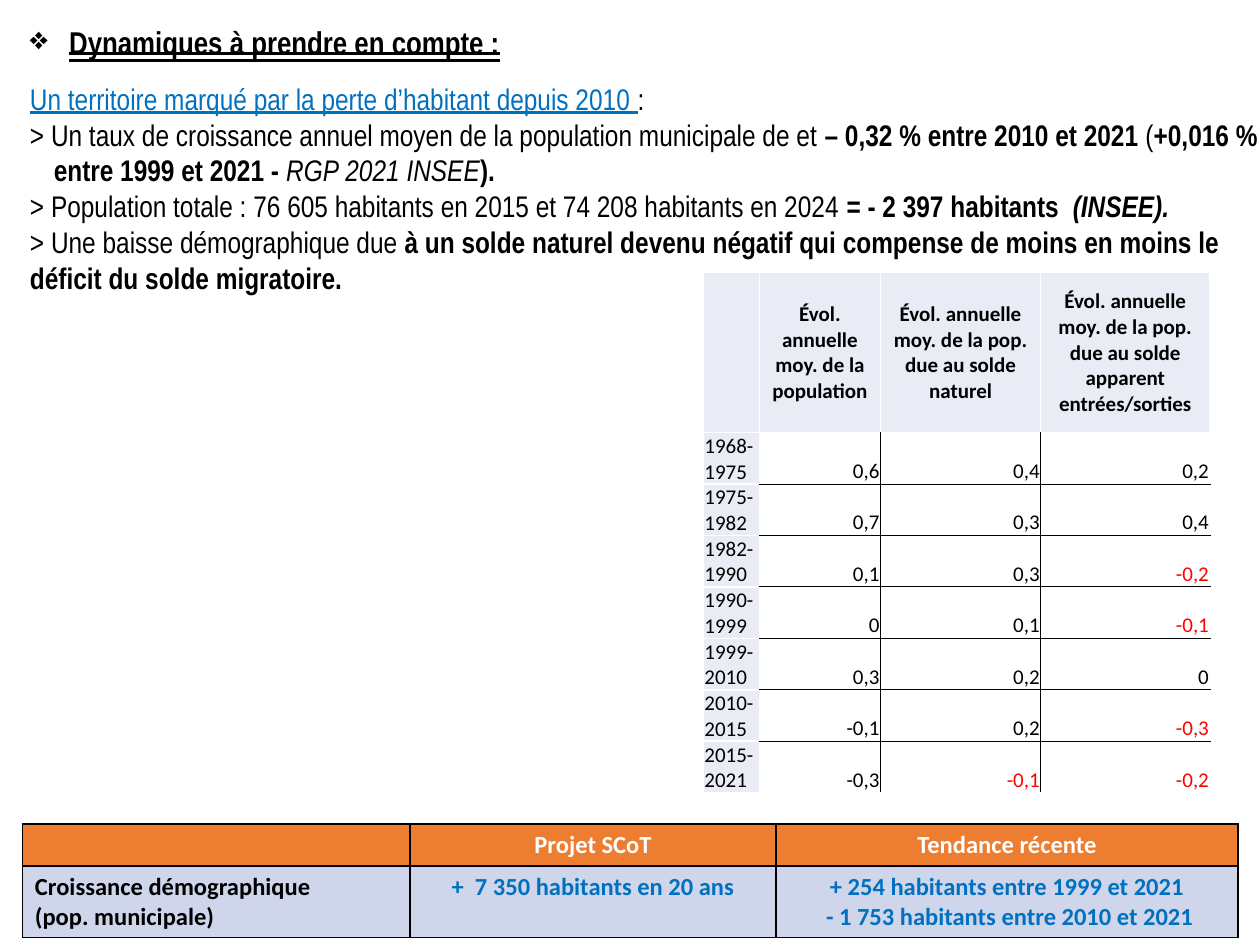
from lxml.etree import SubElement
from pptx import Presentation
from pptx.dml.color import RGBColor
from pptx.enum.text import MSO_ANCHOR, MSO_AUTO_SIZE, MSO_UNDERLINE, PP_ALIGN
from pptx.oxml.ns import qn
from pptx.util import Cm, Pt

COLOURS = {"text": "000000", "accent": "0070C0", "negative": "FF0000", "white": "FFFFFF",
           "orange": "ED7D31", "pale": "E9EBF5", "blue_grey": "CFD5EA"}

BOLD = {"bold": True}
ITALIC = {"italic": True}
UNDERLINE = {"underline": True}

HEADING = [(0.79, [("Dynamiques à prendre en compte :",
                    {"bold": True, "underline": MSO_UNDERLINE.DOUBLE_LINE})])]
FINDINGS = [
    (0, [("Un territoire marqué par la perte d’habitant depuis 2010 ", UNDERLINE | {"colour": "accent"}),
         (":", {})]),
    (0.48, [("> Un taux de croissance annuel moyen de la population municipale de et ", {}),
            ("– 0,32 % entre 2010 et 2021 ", BOLD), ("(", {}),
            ("+0,016 % entre 1999 et 2021 - ", BOLD), ("RGP 2021 INSEE", ITALIC), (").", BOLD)]),
    (0.48, [("> Population totale : 76 605 habitants en 2015 et 74 208 habitants en 2024", {}),
            (" = - 2 397 habitants ", BOLD), (" (INSEE).", BOLD | ITALIC)]),
    (0, [("> Une baisse démographique due ", {}),
         ("à un solde naturel devenu négatif qui compense de moins en moins le "
          "déficit du solde migratoire.", BOLD)]),
]
PROJECTION = [
    ["", "Projet SCoT", "Tendance récente"],
    ["Croissance démographique\n(pop. municipale)", " +  7 350 habitants en 20 ans ",
     "+ 254 habitants entre 1999 et 2021\n - 1 753 habitants entre 2010 et 2021"],
]
EVOLUTION = [
    ["", "Évol. annuelle moy. de la population",
     "Évol. annuelle moy. de la pop. due au solde naturel",
     "Évol. annuelle moy. de la pop. due au solde apparent entrées/sorties"],
    ["1968-1975", "0,6", "0,4", "0,2"],
    ["1975-1982", "0,7", "0,3", "0,4"],
    ["1982-1990", "0,1", "0,3", "-0,2"],
    ["1990-1999", "0", "0,1", "-0,1"],
    ["1999-2010", "0,3", "0,2", "0"],
    ["2010-2015", "-0,1", "0,2", "-0,3"],
    ["2015-2021", "-0,3", "-0,1", "-0,2"],
]


def set_values(target, values):
    for name, value in values.items():
        setattr(target, name, value)


def rgb(name):
    return RGBColor.from_string(COLOURS[name])


def add_span(para, text, size, font, colour="text", **values):
    span = para.add_run()
    span.text = text
    set_values(span.font, {"name": font, "size": Pt(size), "bold": False} | values)
    span.font.color.rgb = rgb(colour)


def fill_placeholder(box, place, paragraphs, size, bullet=None):
    set_values(box, dict(zip(("left", "top", "width", "height"), map(Cm, place))))
    frame = box.text_frame
    set_values(frame, {"word_wrap": True, "auto_size": MSO_AUTO_SIZE.SHAPE_TO_FIT_TEXT,
                       "vertical_anchor": MSO_ANCHOR.TOP})
    for number, (indent, spans) in enumerate(paragraphs):
        para = frame.add_paragraph() if number else frame.paragraphs[0]
        set_values(para, {"alignment": PP_ALIGN.LEFT, "space_before": Pt(0), "line_spacing": 1.0})
        properties = para._p.get_or_add_pPr()
        properties.set("marL", str(Cm(indent)))
        properties.set("indent", str(-Cm(indent)))
        if bullet:
            SubElement(properties, qn("a:buChar"), char=bullet)
        else:
            SubElement(properties, qn("a:buNone"))
        for text, values in spans:
            add_span(para, text, size, "Arial Narrow", **values)


def add_grid(slide, place, widths, heights, rows, style):
    table = slide.shapes.add_table(len(rows), len(widths), *map(Cm, place)).table
    set_values(table, {"first_row": False, "horz_banding": False})
    for column, width in zip(table.columns, widths):
        column.width = Cm(width)
    for row, height in zip(table.rows, heights):
        row.height = Cm(height)
    for r, row in enumerate(rows):
        for c, text in enumerate(row):
            look = style(r, c, text)
            cell = table.cell(r, c)
            set_values(cell, look["cell"])
            for side, (colour, width) in zip("LRTB", look["borders"]):
                line = SubElement(cell._tc.get_or_add_tcPr(), qn("a:ln" + side), w=str(Pt(width)))
                SubElement(SubElement(line, qn("a:solidFill")), qn("a:srgbClr"), val=COLOURS[colour])
            if look["fill"]:
                cell.fill.solid()
                cell.fill.fore_color.rgb = rgb(look["fill"])
            else:
                cell.fill.background()
            for number, words in enumerate(text.split("\n")):
                para = cell.text_frame.add_paragraph() if number else cell.text_frame.paragraphs[0]
                para.alignment = look["align"]
                if words:
                    add_span(para, words, look["size"], "Calibri", look["colour"], bold=look["bold"])
                else:
                    SubElement(para._p, qn("a:endParaRPr"), sz=str(look["size"] * 100))


def projection_style(r, c, text):
    return {"cell": {}, "borders": [("text", 1)] * 4, "size": 14, "bold": True,
            "fill": "blue_grey" if r else "orange",
            "align": PP_ALIGN.CENTER if c else PP_ALIGN.LEFT,
            "colour": "white" if r == 0 else "accent" if c else "text"}


def evolution_style(r, c, text):
    white, thin = ("white", 1), ("text", 0.5)
    label = r == 0 or c == 0
    last_row, last_column = len(EVOLUTION) - 1, len(EVOLUTION[0]) - 1
    borders = [white] * 4 if label else [
        thin if c > 1 else white, thin if c < last_column else white,
        thin if r > 1 else white, thin if r < last_row else white]
    return {"cell": {"margin_left": Cm(0.02), "margin_right": Cm(0.02), "margin_top": Cm(0.02),
                     "margin_bottom": 0,
                     "vertical_anchor": MSO_ANCHOR.BOTTOM if r else MSO_ANCHOR.MIDDLE},
            "borders": borders, "size": 12, "bold": r == 0, "fill": "pale" if label else None,
            "align": PP_ALIGN.CENTER if r == 0 else PP_ALIGN.RIGHT if c else PP_ALIGN.LEFT,
            "colour": "negative" if c > 1 and text.startswith("-") else "text"}


def main():
    deck = Presentation()
    set_values(deck, {"slide_width": Cm(25.4), "slide_height": Cm(19.05)})
    slide = deck.slides.add_slide(deck.slide_layouts[1])
    fill_placeholder(slide.shapes.title, (0.35, 0.33, 14.05, 1.02), HEADING, 18, "❖")
    fill_placeholder(slide.placeholders[1], (0.35, 1.5, 25.43, 5.33), FINDINGS, 17)
    add_grid(slide, (0.45, 16.61, 24.51, 2.27), (7.82, 7.37, 9.32), (0.84, 1.43),
             PROJECTION, projection_style)
    add_grid(slide, (14.18, 5.49, 10.21, 10.44), (1.13, 2.44, 3.23, 3.41), [3.23] + [1.03] * 7,
             EVOLUTION, evolution_style)
    deck.save("out.pptx")


if __name__ == "__main__":
    main()
